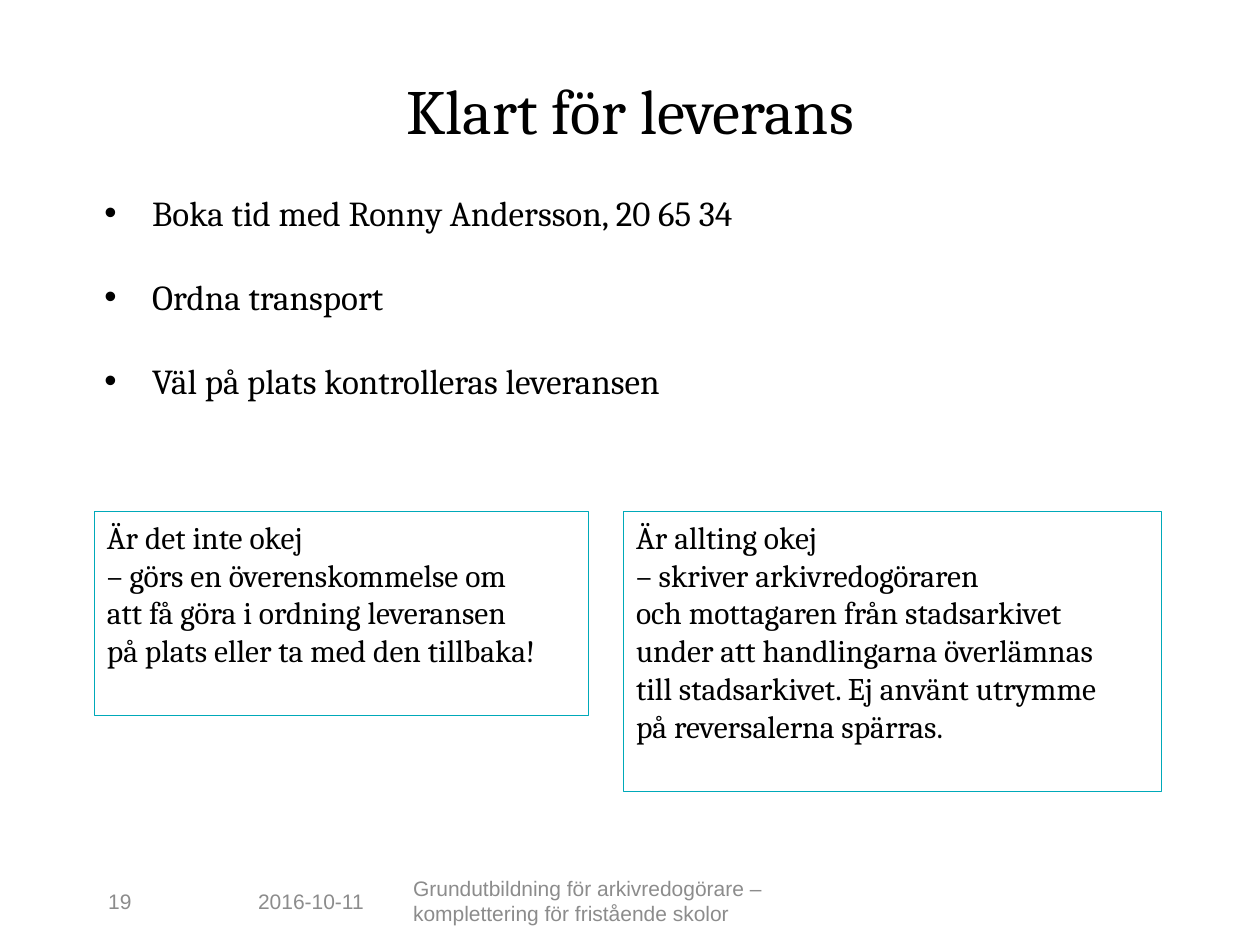
from pptx import Presentation
from pptx.dml.color import RGBColor
from pptx.enum.shapes import MSO_SHAPE
from pptx.enum.text import MSO_ANCHOR, PP_ALIGN
from pptx.oxml.ns import qn
from pptx.util import Inches, Pt
from lxml import etree

BLACK, GREY, TEAL = "000000", "8C8C8C", "00A9B9"
TITLE = "Klart för leverans"
STEPS = [
    "Boka tid med Ronny Andersson, 20 65 34",
    "Ordna transport",
    "Väl på plats kontrolleras leveransen",
]
NOT_OK = [
    "Är det inte okej\v– görs en överenskommelse om\v"
    "att få göra i ordning leveransen\vpå plats eller ta med den tillbaka!",
]
ALL_OK = [
    "Är allting okej\v– skriver arkivredogöraren\v"
    "och mottagaren från stadsarkivet\vunder att handlingarna överlämnas\v"
    "till stadsarkivet. Ej använt utrymme",
    "på reversalerna spärras.",
]
FOOTER = [
    ("19", 1.19),
    ("2016-10-11", 1.23),
    ("Grundutbildning för arkivredogörare – komplettering för fristående skolor", 3.95),
]


def color(code):
    """Return the colour for a hex string."""
    return RGBColor.from_string(code)


def to_inches(box):
    """Turn a (left, top, width, height) box into lengths."""
    return [Inches(value) for value in box]


def add_bullet(para, indent):
    """Give a paragraph a round bullet with a hanging indent."""
    properties = para._p.get_or_add_pPr()
    properties.set("marL", str(Inches(indent)))
    properties.set("indent", str(-Inches(indent)))
    etree.SubElement(properties, qn("a:buFont")).set("typeface", "Arial")
    etree.SubElement(properties, qn("a:buChar")).set("char", "•")


def write(shape, lines, size, font="Cambria", ink=BLACK, align=PP_ALIGN.LEFT,
          anchor=MSO_ANCHOR.TOP, gap=0, bullet_indent=0):
    """Fill a shape with one styled paragraph per line."""
    frame = shape.text_frame
    frame.word_wrap = True
    frame.vertical_anchor = anchor
    for index, line in enumerate(lines):
        para = frame.add_paragraph() if index else frame.paragraphs[0]
        para.text = line
        para.alignment = align
        if index and gap:
            para.space_before = Pt(gap)
        if bullet_indent:
            add_bullet(para, bullet_indent)
        para.font.size = Pt(size)
        para.font.name = font
        para.font.color.rgb = color(ink)


def add_title(page, box):
    """Place the centred heading."""
    write(page.shapes.add_textbox(*to_inches(box)), [TITLE], 36, align=PP_ALIGN.CENTER)


def add_steps(page, box):
    """Place the bulleted delivery steps."""
    write(page.shapes.add_textbox(*to_inches(box)), STEPS, 20, gap=24, bullet_indent=0.38)


def add_outcome(page, box, lines):
    """Place an outlined box that describes one outcome."""
    frame = page.shapes.add_shape(MSO_SHAPE.RECTANGLE, *to_inches(box))
    frame.shadow.inherit = False
    frame.fill.background()
    frame.line.color.rgb = color(TEAL)
    frame.line.width = Pt(0.75)
    write(frame, lines, 18)


def add_footer(page, box):
    """Place the page number, date and course name side by side."""
    left, top, _, height = box
    for text, width in FOOTER:
        field = page.shapes.add_textbox(*to_inches((left, top, width, height)))
        write(field, [text], 12, font="Arial", ink=GREY, anchor=MSO_ANCHOR.MIDDLE)
        left += width


def main():
    """Build and save the slide."""
    deck = Presentation()
    deck.slide_width, deck.slide_height = Inches(10), Inches(7.5)
    page = deck.slides.add_slide(deck.slide_layouts[6])
    add_title(page, (0.75, 0.52, 8.5, 1.25))
    add_steps(page, (0.73, 1.47, 8.5, 5.28))
    add_outcome(page, (0.75, 4.06, 3.92, 1.62), NOT_OK)
    add_outcome(page, (4.95, 4.06, 4.27, 2.22), ALL_OK)
    add_footer(page, (0.76, 6.95, 6.37, 0.4))
    deck.save("out.pptx")


if __name__ == "__main__":
    main()
